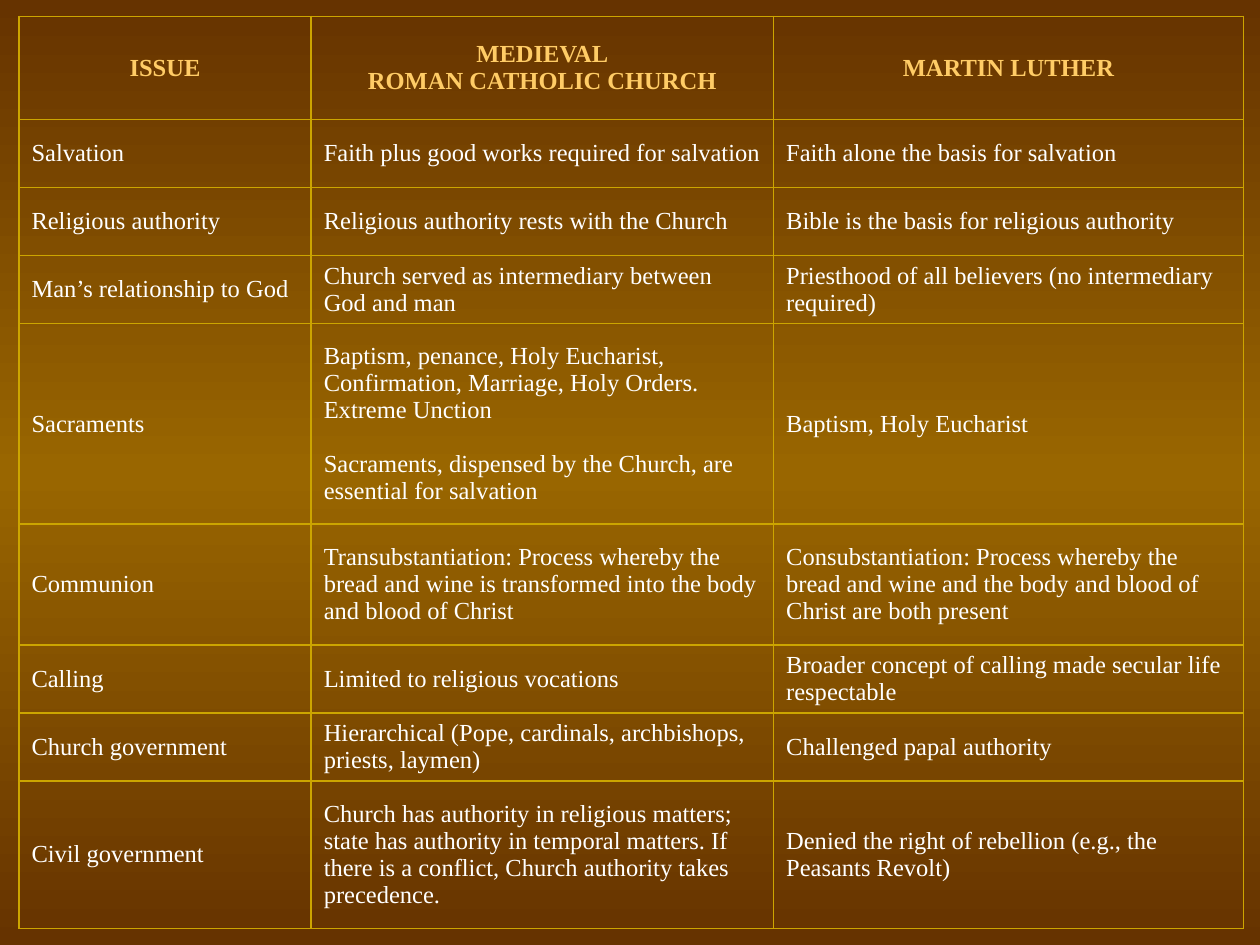
import copy

import lxml.etree
import pptx
import pptx.dml.color
import pptx.enum.text
import pptx.oxml.ns
import pptx.util


def colour(text):
    return pptx.dml.color.RGBColor.from_string(text)


def add_border(cell, side):
    name = pptx.oxml.ns.qn
    properties = cell._tc.get_or_add_tcPr()
    line = lxml.etree.SubElement(properties, name(f"a:ln{side}"), w="12700")
    fill = lxml.etree.SubElement(line, name("a:solidFill"))
    lxml.etree.SubElement(fill, name("a:srgbClr"), val="CCA500")


deck = pptx.Presentation()
deck.slide_width = pptx.util.Inches(10)
deck.slide_height = pptx.util.Inches(7.5)
unit = deck.slide_width // 1000
page = deck.slides.add_slide(deck.slide_layouts[6])

background = page.background.fill
background.gradient()
background.gradient_angle = 270
first_stop = next(page.element.iter(pptx.oxml.ns.qn("a:gs")))
first_stop.addnext(copy.deepcopy(first_stop))
shades = [(0, "663300"), (0.5, "996600"), (1, "663300")]
for stop, (position, shade) in zip(background.gradient_stops, shades):
    stop.position = position
    stop.color.rgb = colour(shade)

column_widths = [232, 367, 373]
rows = [
    (82, "ISSUE", "MEDIEVAL\vROMAN CATHOLIC CHURCH", "MARTIN LUTHER"),
    (54, "Salvation", "Faith plus good works required for salvation",
     "Faith alone the basis for salvation"),
    (54, "Religious authority", "Religious authority rests with the Church",
     "Bible is the basis for religious authority"),
    (54, "Man’s relationship to God",
     "Church served as intermediary between God and man",
     "Priesthood of all believers (no intermediary required)"),
    (159, "Sacraments",
     "Baptism, penance, Holy Eucharist, Confirmation, Marriage, Holy Orders. "
     "Extreme Unction\n"
     "Sacraments, dispensed by the Church, are essential for salvation",
     "Baptism, Holy Eucharist"),
    (96, "Communion",
     "Transubstantiation: Process whereby the bread and wine is transformed "
     "into the body and blood of Christ",
     "Consubstantiation: Process whereby the bread and wine and the body and "
     "blood of Christ are both present"),
    (54, "Calling", "Limited to religious vocations",
     "Broader concept of calling made secular life respectable"),
    (54, "Church government",
     "Hierarchical (Pope, cardinals, archbishops, priests, laymen)",
     "Challenged papal authority"),
    (117, "Civil government",
     "Church has authority in religious matters; state has authority in "
     "temporal matters. If there is a conflict, Church authority takes "
     "precedence.",
     "Denied the right of rebellion (e.g., the Peasants Revolt)"),
]

table = page.shapes.add_table(
    len(rows), len(column_widths), 15 * unit, 13 * unit,
    sum(column_widths) * unit, sum(row[0] for row in rows) * unit).table
table.first_row = False
table.horz_banding = False
for column, width in zip(table.columns, column_widths):
    column.width = width * unit

for row_number, (height, *texts) in enumerate(rows):
    table.rows[row_number].height = height * unit
    header = row_number == 0
    for column_number, text in enumerate(texts):
        cell = table.cell(row_number, column_number)
        for side in "LRTB":
            add_border(cell, side)
        cell.fill.background()
        cell.vertical_anchor = pptx.enum.text.MSO_ANCHOR.MIDDLE
        cell.text_frame.text = text
        for number, para in enumerate(cell.text_frame.paragraphs):
            if header:
                para.alignment = pptx.enum.text.PP_ALIGN.CENTER
            if number:
                para.space_before = pptx.util.Pt(15.5)
            for span in para.runs:
                span.font.name = "Times New Roman"
                span.font.size = pptx.util.Pt(14)
                span.font.bold = header
                span.font.color.rgb = colour("FFCC66" if header else "FFFFFF")

deck.save("out.pptx")
